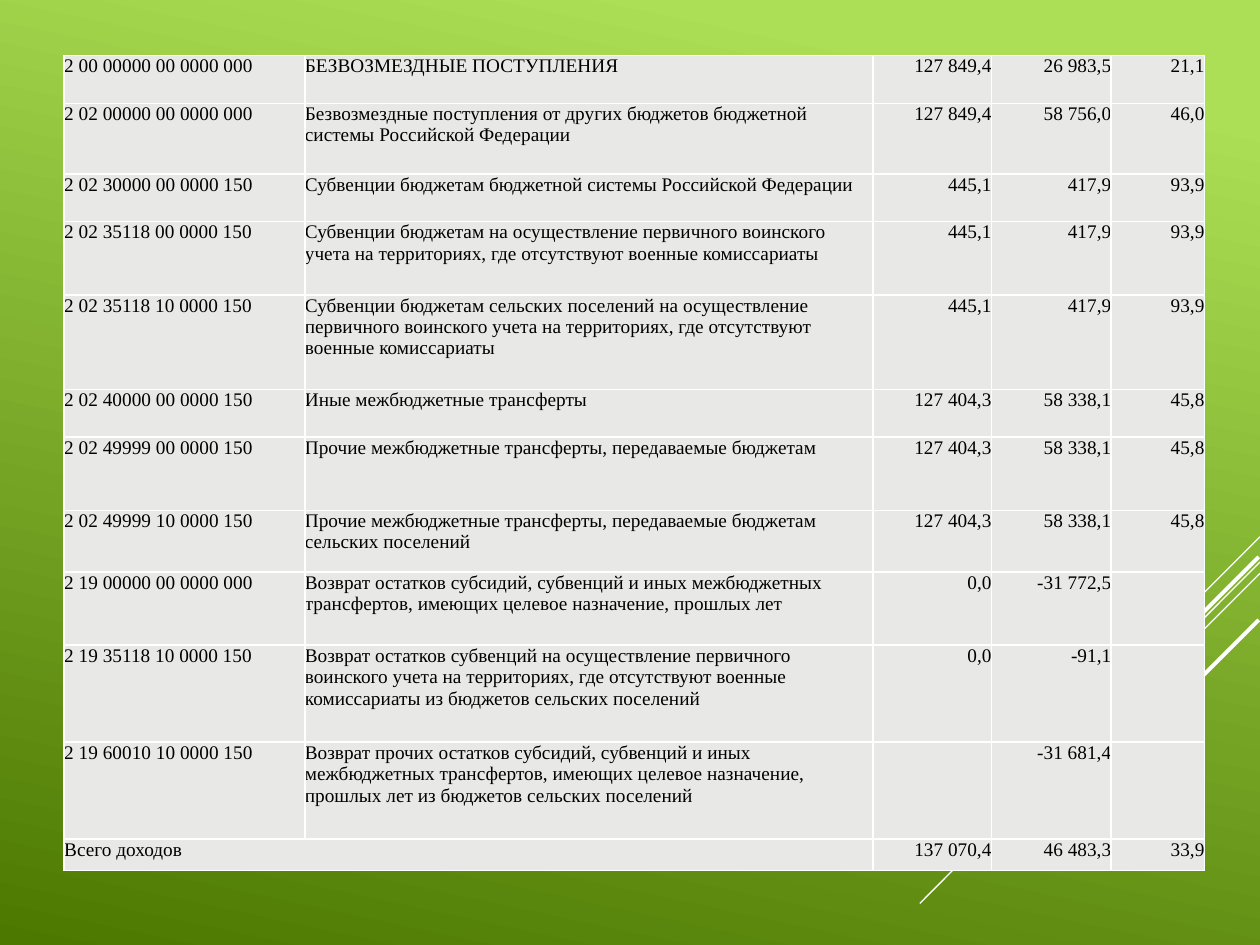
import dataclasses

import lxml.etree
import pptx
import pptx.dml.color
import pptx.enum.shapes
import pptx.enum.text
import pptx.oxml.ns
import pptx.util

Inches = pptx.util.Inches
Pt = pptx.util.Pt


@dataclasses.dataclass
class Theme:
    light: str = "ACDF55"
    dark: str = "4C7800"
    line: str = "FFFFFF"
    cell: str = "E8E9E7"
    ink: str = "000000"
    font: str = "Times New Roman"
    size: float = 11
    border: float = 1


STREAKS = [
    (10, 4.26, 9.17, 5.09, 0.75),
    (10, 4.46, 7.3, 7.17, 0.75),
    (10, 4.55, 8.28, 6.27, 0.75),
    (9.99, 4.42, 8.42, 5.99, 2.25),
    (9.99, 4.92, 8.85, 6.06, 2.25),
]
WIDTHS = [1.91, 4.51, 0.94, 0.95, 0.74]
# Each row: height, code, name, plan, actual, percent
ROWS = [
    (0.38, "2 00 00000 00 0000 000", "БЕЗВОЗМЕЗДНЫЕ ПОСТУПЛЕНИЯ",
     "127 849,4", "26 983,5", "21,1"),
    (0.56, "2 02 00000 00 0000 000",
     "Безвозмездные поступления от других бюджетов бюджетной "
     "системы Российской Федерации",
     "127 849,4", "58 756,0", "46,0"),
    (0.38, "2 02 30000 00 0000 150",
     "Субвенции бюджетам бюджетной системы Российской Федерации",
     "445,1", "417,9", "93,9"),
    (0.58, "2 02 35118 00 0000 150",
     "Субвенции бюджетам на осуществление первичного воинского "
     "учета на территориях, где отсутствуют военные комиссариаты",
     "445,1", "417,9", "93,9"),
    (0.75, "2 02 35118 10 0000 150",
     "Субвенции бюджетам сельских поселений на осуществление "
     "первичного воинского учета на территориях, где отсутствуют "
     "военные комиссариаты",
     "445,1", "417,9", "93,9"),
    (0.38, "2 02 40000 00 0000 150", "Иные межбюджетные трансферты",
     "127 404,3", "58 338,1", "45,8"),
    (0.58, "2 02 49999 00 0000 150",
     "Прочие межбюджетные трансферты, передаваемые бюджетам",
     "127 404,3", "58 338,1", "45,8"),
    (0.49, "2 02 49999 10 0000 150",
     "Прочие межбюджетные трансферты, передаваемые бюджетам "
     "сельских поселений",
     "127 404,3", "58 338,1", "45,8"),
    (0.58, "2 19 00000 00 0000 000",
     "Возврат остатков субсидий, субвенций и иных межбюджетных "
     "трансфертов, имеющих целевое назначение, прошлых лет",
     "0,0", "-31 772,5", ""),
    (0.77, "2 19 35118 10 0000 150",
     "Возврат остатков субвенций на осуществление первичного "
     "воинского учета на территориях, где отсутствуют военные "
     "комиссариаты из бюджетов сельских поселений",
     "0,0", "-91,1", ""),
    (0.77, "2 19 60010 10 0000 150",
     "Возврат прочих остатков субсидий, субвенций и иных "
     "межбюджетных трансфертов, имеющих целевое назначение, "
     "прошлых лет из бюджетов сельских поселений",
     "", "-31 681,4", ""),
    (0.25, "Всего доходов", "", "137 070,4", "46 483,3", "33,9"),
]


def rgb(code):
    return pptx.dml.color.RGBColor.from_string(code)


class Page:
    def __init__(self, slide, theme):
        self.slide = slide
        self.theme = theme

    def backdrop(self):
        fill = self.slide.background.fill
        fill.gradient()
        fill.gradient_angle = 360 - 102  # counted counter-clockwise
        stops = [(0.1, self.theme.light), (1, self.theme.dark)]
        for stop, (place, code) in zip(fill.gradient_stops, stops):
            stop.position = place
            stop.color.rgb = rgb(code)

    def streak(self, left, top, right, low, width):
        line = self.slide.shapes.add_connector(
            pptx.enum.shapes.MSO_CONNECTOR.STRAIGHT,
            Inches(left), Inches(top), Inches(right), Inches(low))
        line.line.color.rgb = rgb(self.theme.line)
        line.line.width = Pt(width)
        lxml.etree.SubElement(line._element.spPr,
                              pptx.oxml.ns.qn("a:effectLst"))

    def border(self, cell):
        props = cell._tc.get_or_add_tcPr()
        for side in ("lnL", "lnR", "lnT", "lnB"):
            edge = lxml.etree.SubElement(
                props, pptx.oxml.ns.qn("a:" + side),
                w=str(Pt(self.theme.border)))
            fill = lxml.etree.SubElement(edge, pptx.oxml.ns.qn("a:solidFill"))
            lxml.etree.SubElement(fill, pptx.oxml.ns.qn("a:srgbClr"),
                                  val=self.theme.line)

    def cell(self, cell, text, align):
        self.border(cell)
        cell.fill.solid()
        cell.fill.fore_color.rgb = rgb(self.theme.cell)
        cell.margin_left = cell.margin_right = 0
        cell.margin_top = cell.margin_bottom = 0
        cell.text_frame.text = text
        para = cell.text_frame.paragraphs[0]
        para.alignment = align
        for run in para.runs:
            run.font.name = self.theme.font
            run.font.size = Pt(self.theme.size)
            run.font.color.rgb = rgb(self.theme.ink)

    def table(self, left, top, widths, rows):
        height = sum(row[0] for row in rows)
        table = self.slide.shapes.add_table(
            len(rows), len(widths), Inches(left), Inches(top),
            Inches(sum(widths)), Inches(height)).table
        table.first_row = table.horz_banding = False
        for column, width in zip(table.columns, widths):
            column.width = Inches(width)
        kinds = pptx.enum.text.PP_ALIGN
        for r, (tall, *texts) in enumerate(rows):
            table.rows[r].height = Inches(tall)
            for c, text in enumerate(texts):
                align = kinds.LEFT if c < 2 else kinds.RIGHT
                self.cell(table.cell(r, c), text, align)
        last = len(rows) - 1
        table.cell(last, 0).merge(table.cell(last, 1))


def main():
    deck = pptx.Presentation()
    deck.slide_width = Inches(10)
    deck.slide_height = Inches(7.5)
    page = Page(deck.slides.add_slide(deck.slide_layouts[6]), Theme())
    page.backdrop()
    for streak in STREAKS:
        page.streak(*streak)
    page.table(0.51, 0.44, WIDTHS, ROWS)
    deck.save("out.pptx")


if __name__ == "__main__":
    main()
